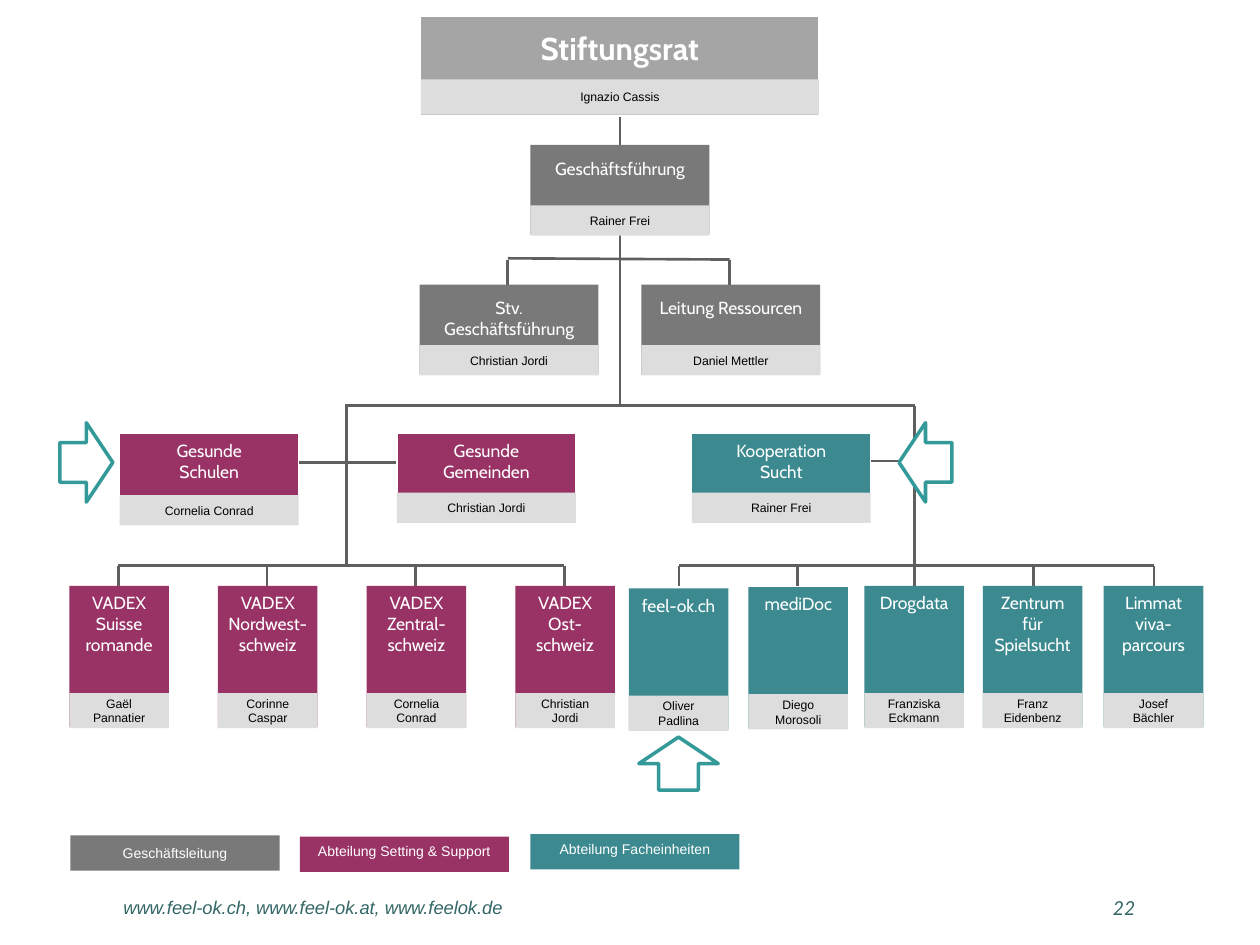
from lxml import etree
from pptx import Presentation
from pptx.dml.color import RGBColor
from pptx.enum.shapes import MSO_CONNECTOR, MSO_SHAPE
from pptx.enum.text import MSO_ANCHOR, PP_ALIGN
from pptx.oxml.ns import qn
from pptx.util import Inches, Pt

RECT, ARROW = MSO_SHAPE.RECTANGLE, MSO_SHAPE.DOWN_ARROW
STRAIGHT = MSO_CONNECTOR.STRAIGHT
TOP, MIDDLE = MSO_ANCHOR.TOP, MSO_ANCHOR.MIDDLE
LEFT, CENTER, RIGHT = PP_ALIGN.LEFT, PP_ALIGN.CENTER, PP_ALIGN.RIGHT

COLUMNS, ROWS = 100, 75  # grid over the whole slide
WHITE, BLACK = "FFFFFF", "000000"
LIGHT, SILVER, GREY = "DDDDDD", "A5A5A5", "797979"
BERRY, TEAL = "993366", "3C8A90"
WIRE, FOOTER, OUTLINE = "5F5F5F", "336666", "339999"


def color(value):
    return RGBColor.from_string(value)


class OrgChart:
    """Style and current page; all lengths are grid columns and rows."""

    def __init__(self, deck):
        self.page = deck.slides.add_slide(deck.slide_layouts[6])
        self.column = deck.slide_width / COLUMNS
        self.row = deck.slide_height / ROWS

    def place(self, *lengths):
        units = (self.column, self.row) * 2
        return [round(length * unit) for length, unit in zip(lengths, units)]

    def label(self, box, text, size, ink, font="Arial", align=CENTER, anchor=TOP,
              insets=(0.1, 0.05, 0.1, 0.05), wrap=True, bold=False, italic=False):
        frame = box.text_frame
        frame.word_wrap, frame.vertical_anchor = wrap, anchor
        (frame.margin_left, frame.margin_top, frame.margin_right,
         frame.margin_bottom) = [Inches(inset) for inset in insets]
        para = frame.paragraphs[0]
        para.text, para.alignment = text, align
        para.font.size, para.font.name = Pt(size), font
        para.font.bold, para.font.italic = bold, italic
        para.font.color.rgb = color(ink)

    def shape(self, kind, at, fill, line=None, weight=0.75):
        shape = self.page.shapes.add_shape(kind, *self.place(*at))
        shape.shadow.inherit = False
        shape.fill.solid()
        shape.fill.fore_color.rgb = color(fill)
        if line:
            shape.line.color.rgb = color(line)
            shape.line.width = Pt(weight)
        else:
            shape.line.fill.background()
        return shape

    def card(self, at, fill, title, name, name_row, name_rows=2.4,
             line=None, size=10, inset=0.05, side=0.06, bold=False):
        """A coloured title box with a light name strip over its foot."""
        box = self.shape(RECT, at, fill, line)
        self.label(box, title, size, WHITE, "Cabin", wrap=False, bold=bold,
                   insets=(0.1, inset, 0.1, 0.05))
        left, top, width, _ = at
        strip = self.shape(RECT, (left, top + name_row, width, name_rows), LIGHT)
        self.label(strip, name, 7, BLACK, anchor=MIDDLE, insets=(side, 0.05, side, 0.05))

    def wire(self, *ends):
        wire = self.page.shapes.add_connector(STRAIGHT, *self.place(*ends))
        wire.line.color.rgb = color(WIRE)
        wire.line.width = Pt(1.5)
        etree.SubElement(wire._element.spPr, qn("a:effectLst"))

    def arrow(self, left, top, rotation):
        self.shape(ARROW, (left, top, 6.3, 4.2), WHITE, OUTLINE, 2).rotation = rotation

    def legend(self, left, top, fill, text, anchor):
        box = self.shape(RECT, (left, top, 16.6, 2.8), fill)
        self.label(box, text, 8, WHITE, anchor=anchor, wrap=False)

    def footer(self, at, text, size, font, align):
        box = self.page.shapes.add_textbox(*self.place(*at))
        self.label(box, text, size, FOOTER, font, align, insets=(0, 0, 0, 0), italic=True)


# Department heads: left, fill, title, name, row of the name strip
DEPARTMENTS = [
    (9.5, BERRY, "Gesunde\nSchulen", "Cornelia Conrad", 4.9),
    (31.5, BERRY, "Gesunde\nGemeinden", "Christian Jordi", 4.7),
    (54.9, TEAL, "Kooperation\nSucht", "Rainer Frei", 4.7),
]
REGIONS = [
    ("VADEX\nSuisse\nromande", "Gaël\nPannatier"),
    ("VADEX\nNordwest-\nschweiz", "Corinne\nCaspar"),
    ("VADEX\nZentral-\nschweiz", "Cornelia\nConrad"),
    ("VADEX\nOst-\nschweiz", "Christian\nJordi"),
]
# Units: left, top, title, name
UNITS = [
    (49.9, 46.7, "feel-ok.ch", "Oliver\nPadlina"),
    (59.4, 46.6, "mediDoc", "Diego\nMorosoli"),
    (68.6, 46.5, "Drogdata", "Franziska\nEckmann"),
    (78, 46.5, "Zentrum\nfür\nSpielsucht", "Franz\nEidenbenz"),
    (87.6, 46.5, "Limmat\nviva-\nparcours", "Josef\nBächler"),
]
REGION_STEP = 11.8
REGION_DROPS = [9.4 + REGION_STEP * index for index in range(len(REGIONS))]
UNIT_DROPS = [53.9, 63.3, 72.6, 82, 91.6]


def main():
    deck = Presentation()
    deck.slide_width, deck.slide_height = Inches(10), Inches(7.5)
    chart = OrgChart(deck)

    # Wires of the upper levels
    chart.wire(49.2, 8.7, 49.2, 32.2)
    chart.wire(40.3, 20.5, 57.9, 20.6)
    for column in (40.3, 57.9):
        chart.wire(column, 20.6, column, 23.9)
    chart.wire(27.4, 32.2, 72.6, 32.2)
    chart.wire(22.2, 36.7, 32.5, 36.7)
    chart.wire(67.5, 36.6, 72.6, 36.6)

    # Trunk, crossbar and drops of the lowest level
    for trunk, drops in ((27.5, REGION_DROPS), (72.6, UNIT_DROPS)):
        chart.wire(trunk, 32.2, trunk, 44.9)
        chart.wire(drops[0], 44.9, drops[-1], 44.9)
        for drop in drops:
            chart.wire(drop, 44.9, drop, 46.5)

    # Board and management
    chart.card((33.4, 1.3, 31.6, 7.9), SILVER, "Stiftungsrat", "Ignazio Cassis", 5, 2.8,
               line=WHITE, size=18, inset=0.1, side=0.1, bold=True)
    for left, top, title, name in (
            (42.1, 11.5, "Geschäftsführung", "Rainer Frei"),
            (33.3, 22.6, "Stv.\nGeschäftsführung", "Christian Jordi"),
            (50.9, 22.6, "Leitung Ressourcen", "Daniel Mettler")):
        chart.card((left, top, 14.2, 7.1), GREY, title, name, 4.8, inset=0.1, side=0.1)

    # Departments, regions and units
    for left, fill, title, name, name_row in DEPARTMENTS:
        chart.card((left, 34.4, 14.2, 7.1), fill, title, name, name_row, line=WHITE)
    for index, (title, name) in enumerate(REGIONS):
        chart.card((5.5 + REGION_STEP * index, 46.5, 7.9, 11.2), BERRY, title, name, 8.5, 2.8)
    for left, top, title, name in UNITS:
        chart.card((left, top, 7.9, 11.2), TEAL, title, name, 8.5, 2.8)

    # Pointers
    chart.arrow(50.7, 58.5, 180)
    chart.arrow(3.7, 34.6, 270)
    chart.arrow(70.3, 34.6, 90)

    # Legend and footer
    chart.legend(5.6, 66.3, GREY, "Geschäftsleitung", MIDDLE)
    chart.legend(23.8, 66.4, BERRY, "Abteilung Setting & Support", TOP)
    chart.legend(42.1, 66.2, TEAL, "Abteilung Facheinheiten", TOP)
    chart.footer((9.8, 71.1, 60.6, 2.6), "www.feel-ok.ch, www.feel-ok.at, www.feelok.de",
                 10.5, "Arial", LEFT)
    chart.footer((79.9, 71.1, 10.2, 2.6), "22", 11, "Lato", RIGHT)

    deck.save("out.pptx")


if __name__ == "__main__":
    main()
